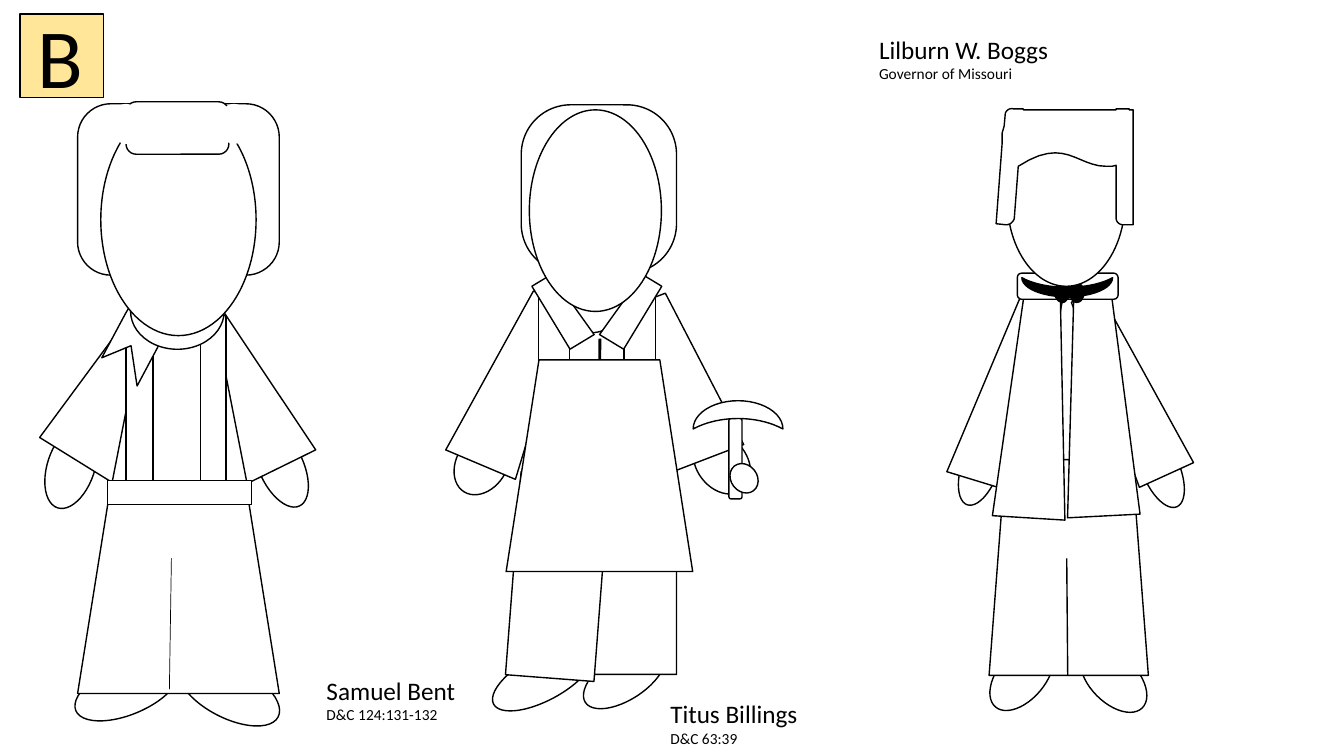
from dataclasses import dataclass

from lxml.etree import SubElement
from pptx import Presentation
from pptx.dml.color import RGBColor as RGB
from pptx.enum.shapes import MSO_CONNECTOR as LINK, MSO_SHAPE as SHAPE
from pptx.oxml.ns import qn
from pptx.util import Inches, Pt


@dataclass(frozen=True)
class Theme:
    """Colours, font and sizes of the slide."""
    ink: str = "000000"
    paper: str = "FFFFFF"
    badge: str = "FFE699"
    shirt_edge: str = "325491"
    font: str = "Calibri"
    letter: int = 60
    name: int = 18
    note: int = 11


class Sketch:
    """Draws outlined pieces and captions on one slide."""

    def __init__(self, slide, theme):
        self.slide, self.theme = slide, theme
        self.canvas = slide.shapes

    def group(self):
        self.canvas = self.slide.shapes.add_group_shape().shapes

    def ungroup(self):
        self.canvas = self.slide.shapes

    def finish(self, piece, fill=None, edge=None, weight=1):
        piece.shadow.inherit = False
        piece.fill.solid()
        piece.fill.fore_color.rgb = RGB.from_string(fill or self.theme.paper)
        if weight:
            piece.line.color.rgb = RGB.from_string(edge or self.theme.ink)
            piece.line.width = Pt(weight)
        else:
            piece.line.fill.background()

    def preset(self, kind, left, top, width, height, rot=0, adj=None, flips=(), **look):
        piece = self.canvas.add_shape(kind, *map(Inches, (left, top, width, height)))
        piece.rotation = rot
        if adj is not None:
            piece.adjustments[0] = adj
        for flip in flips:
            piece._element.spPr.find(qn("a:xfrm")).set(flip, "1")
        self.finish(piece, **look)

    def oval(self, *frame, **look):
        self.preset(SHAPE.OVAL, *frame, **look)

    def trapezoid(self, *frame, **look):
        self.preset(SHAPE.TRAPEZOID, *frame, **look)

    def rect(self, *frame, **look):
        self.preset(SHAPE.RECTANGLE, *frame, **look)

    def rounded(self, *frame, **look):
        self.preset(SHAPE.ROUNDED_RECTANGLE, *frame, **look)

    def moon(self, *frame, **look):
        self.preset(SHAPE.MOON, *frame, **look)

    def collar(self, *frame, **look):
        self.preset(SHAPE.FLOWCHART_MANUAL_INPUT, *frame, **look)

    def seam(self, x1, y1, x2, y2, weight=1):
        seam = self.canvas.add_connector(LINK.STRAIGHT, *map(Inches, (x1, y1, x2, y2)))
        seam.line.color.rgb = RGB.from_string(self.theme.ink)
        seam.line.width = Pt(weight)
        SubElement(seam._element.spPr, qn("a:effectLst"))

    def outline(self, start, *steps, **look):
        """Closed outline; a step is a point or the six numbers of a Bezier curve."""
        points = [start]
        for step in steps:
            if len(step) == 2:
                points.append(step)
                continue
            knots = [points[-1], step[:2], step[2:4], step[4:]]
            for i in range(1, 13):
                t = i / 12
                weights = ((1 - t) ** 3, 3 * t * (1 - t) ** 2, 3 * t * t * (1 - t), t ** 3)
                points.append(tuple(sum(w * k[axis] for w, k in zip(weights, knots))
                                    for axis in (0, 1)))
        first, *rest = [tuple(map(Inches, point)) for point in points]
        builder = self.canvas.build_freeform(*first, scale=1.0)
        builder.add_line_segments(rest, close=True)
        self.finish(builder.convert_to_shape(), **look)

    def text(self, *lines, left, top, width=1.96, height=0.59, sizes=None):
        box = self.canvas.add_textbox(*map(Inches, (left, top, width, height)))
        frame = box.text_frame
        frame.word_wrap = True
        for i, (line, size) in enumerate(zip(lines, sizes or (self.theme.name, self.theme.note))):
            paragraph = frame.add_paragraph() if i else frame.paragraphs[0]
            run = paragraph.add_run()
            run.text = line
            run.font.name, run.font.size = self.theme.font, Pt(size)
            run.font.color.rgb = RGB.from_string(self.theme.ink)


def draw_bent(art):
    """Samuel Bent, with a neckerchief and a belt."""
    art.group()
    for limb in ((2.01, 6.31, 0.52, 1.1, 297.3), (1.01, 6.29, 0.5, 1.1, 67.5),
                 (2.57, 4.2, 0.44, 0.86, 335.3), (0.47, 4.2, 0.47, 0.86, 18.3)):
        art.oval(*limb)
    for garment in ((1.9, 3.04, 0.9, 1.71, 333.8), (0.73, 3.16, 0.96, 1.55, 31.8, 0.131),
                    (1.07, 3.14, 1.42, 1.86, 0, 0.256), (0.77, 4.81, 2, 2.07, 0, 0.165)):
        art.trapezoid(*garment)
    for band in ((1.25, 3.16, 0.27, 1.63), (1.99, 3.13, 0.25, 1.65),
                 (1.66, 4.17, 0.24, 1.43, 90)):
        art.rect(*band)
    art.seam(1.7, 5.54, 1.68, 6.84, weight=0.5)
    art.outline((1.35, 2.93), (1.57, 3.18), (1.69, 3.21), (1.36, 3.83),
                (1.3, 3.43), (1.01, 3.55), (1.24, 3.12))
    art.moon(1.57, 2.81, 0.38, 0.93, 270)
    art.rounded(0.77, 1.03, 2, 1.7, adj=0.194)
    art.oval(1, 1.03, 1.54, 2.3)
    art.rounded(1.25, 1.01, 1.02, 0.52, adj=0.194)
    for temple in (1.1, 2.17):
        art.oval(temple, 1.03, 0.3, 0.4, weight=0)
    art.ungroup()


def draw_billings(art):
    """Titus Billings, with an apron and a pickaxe."""
    art.group()
    art.rounded(5.17, 1.04, 1.54, 1.67, adj=0.319)
    for limb in ((6.91, 4.26, 0.5, 0.67, 322.3), (4.53, 4.26, 0.5, 0.67, 32.2),
                 (5.97, 6.25, 0.45, 0.93, 57), (5.16, 6.17, 0.45, 1.11, 61.9)):
        art.oval(*limb)
    for garment in ((5.73, 4.79, 0.98, 1.9, 0, 0.001), (5.09, 4.71, 0.88, 2.02, 4.4, 0),
                    (4.74, 2.89, 0.75, 1.79, 22.9), (6.35, 2.92, 0.75, 1.68, 339),
                    (5.14, 2.91, 1.6, 2.04)):
        art.trapezoid(*garment)
    art.oval(5.42, 1.76, 0.91, 1.54)
    art.seam(5.95, 3.36, 5.94, 4.95, weight=2)
    art.oval(5.65, 4.73, 0.44, 1.2, 264.6, weight=0)
    art.trapezoid(5.02, 3.57, 1.85, 2.1, adj=0.176)
    for strap in (5.34, 6.19):
        art.rect(strap, 2.91, 0.31, 0.66)
    art.collar(5.89, 2.94, 0.73, 0.28, 121.2, flips=("flipV",))
    art.collar(5.22, 2.94, 0.73, 0.28, 238.8, flips=("flipH", "flipV"))
    art.oval(5.25, 1.09, 1.31, 2)
    art.rounded(7.23, 4.15, 0.13, 0.8)
    art.moon(7.18, 3.67, 0.28, 0.89, 90, 0.632)
    art.oval(7.25, 4.59, 0.26, 0.31, 322.3)
    art.ungroup()


def draw_boggs(art):
    """Lilburn W. Boggs, with a coat and a bow tie."""
    art.group()
    for limb in ((9.9, 6.3, 0.47, 0.81, 40.3), (10.81, 6.33, 0.47, 0.81, 315.3),
                 (9.54, 4.22, 0.37, 0.81, 19.1), (11.33, 4.25, 0.37, 0.81, 337.1)):
        art.oval(*limb)
    art.rect(10.28, 2.91, 0.59, 1.99, edge=art.theme.shirt_edge)
    for garment in ((9.81, 4.56, 1.58, 2.14, 0, 0.103), (10.87, 2.85, 0.59, 1.95, 335.5),
                    (10.53, 2.84, 0.72, 2.28, 357.1), (9.66, 2.88, 0.8, 1.96, 17),
                    (9.91, 2.93, 0.72, 2.21, 3.5)):
        art.trapezoid(*garment)
    art.seam(10.58, 5.54, 10.59, 6.7)
    art.rounded(10.09, 2.71, 1, 0.26)
    art.moon(10.49, 2.4, 0.19, 0.9, 270, fill=art.theme.ink)
    art.outline((10.59, 2.77), (10.61, 2.77, 10.63, 2.78, 10.64, 2.8), (10.65, 2.82),
                (10.68, 2.81), (10.72, 2.81, 10.75, 2.85, 10.75, 2.9),
                (10.75, 2.96, 10.72, 3, 10.68, 3), (10.66, 3, 10.64, 2.99, 10.63, 2.97),
                (10.62, 2.95), (10.59, 2.96), (10.57, 2.99, 10.56, 3, 10.54, 3),
                (10.5, 3, 10.46, 2.96, 10.46, 2.9), (10.46, 2.86, 10.48, 2.83, 10.51, 2.81),
                (10.54, 2.8), (10.55, 2.78, 10.57, 2.77, 10.59, 2.77), fill=art.theme.ink)
    art.oval(9.99, 1.12, 1.17, 1.72)
    art.outline((11.07, 1.08), (11.2, 1.08), (11.2, 1.09), (11.24, 1.09), (11.24, 2.23),
                (11.14, 2.23), (11.1, 2.23, 11.07, 2.2, 11.07, 2.16), (11.07, 1.64),
                (11.03, 1.65), (10.97, 1.65), (10.68, 1.65, 10.56, 1.35, 10.1, 1.65),
                (10.06, 2.17), (10.05, 2.2, 10.02, 2.23, 9.98, 2.23), (9.88, 2.22),
                (9.94, 1.42), (9.94, 1.32), (9.96, 1.25), (9.97, 1.14),
                (9.97, 1.1, 10.01, 1.07, 10.05, 1.08), (10.15, 1.08), (10.15, 1.09),
                (11.07, 1.09))
    art.ungroup()


def main():
    """Build and save the slide."""
    deck = Presentation()
    deck.slide_width, deck.slide_height = Inches(13.33), Inches(7.5)
    theme = Theme()
    art = Sketch(deck.slides.add_slide(deck.slide_layouts[6]), theme)
    art.text("Samuel Bent", "D&C 124:131-132", left=3.14, top=6.65)
    draw_bent(art)
    art.text("Titus Billings", "D&C 63:39", left=6.55, top=6.88)
    draw_billings(art)
    draw_boggs(art)
    art.text("Lilburn W. Boggs", "Governor of Missouri", left=8.62, top=0.29)
    art.group()
    art.rect(0.2, 0.14, 0.83, 0.83, fill=theme.badge)
    art.text("B", left=0.27, top=0, width=0.38, height=1.11, sizes=(theme.letter,))
    deck.save("out.pptx")


if __name__ == "__main__":
    main()
